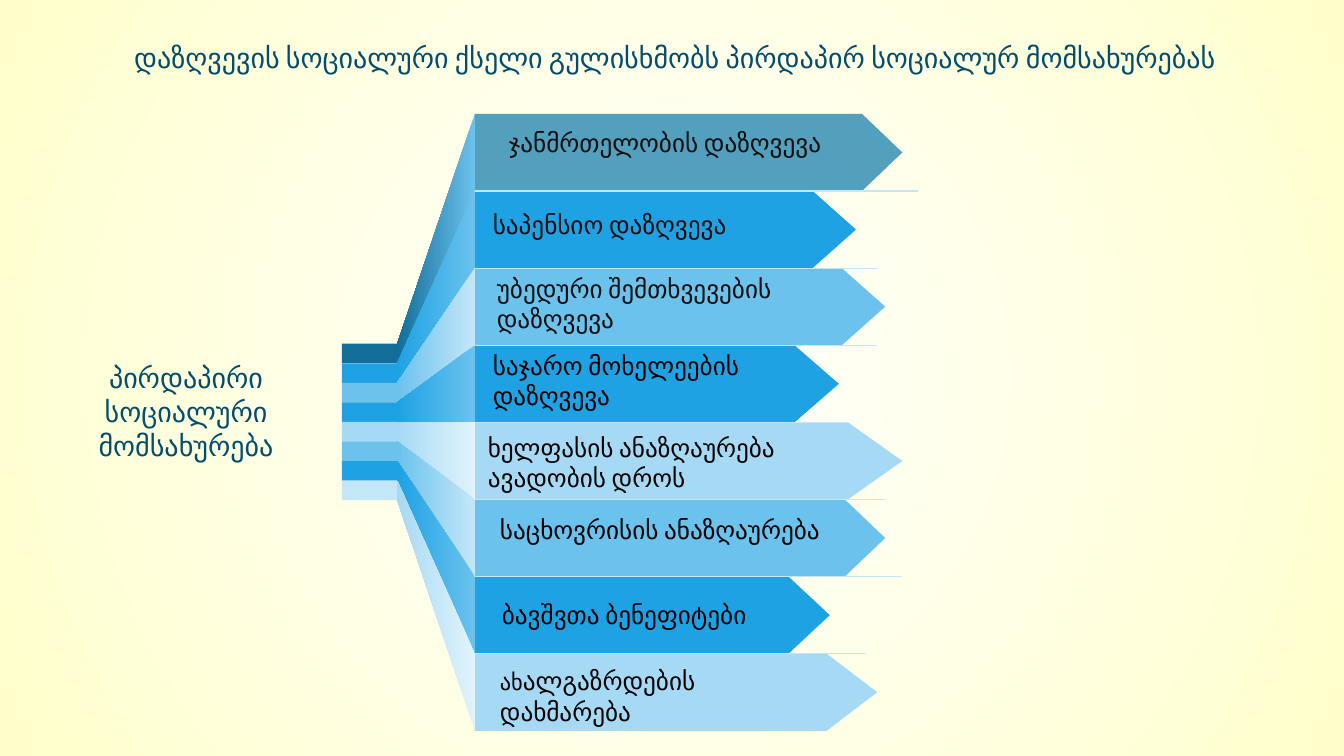
from collections import namedtuple

from lxml import etree
from pptx import Presentation
from pptx.dml.color import RGBColor as RGB
from pptx.enum.shapes import MSO_CONNECTOR as CONN, MSO_SHAPE as SHAPE
from pptx.enum.text import MSO_ANCHOR as ANCHOR, PP_ALIGN as ALIGN
from pptx.oxml.ns import qn
from pptx.util import Inches, Pt

WHITE = RGB(0xFF, 0xFF, 0xFF)
CREAM = RGB(0xFF, 0xFF, 0xCC)
NAVY = RGB(0x00, 0x4D, 0x6E)
BLACK = RGB(0x00, 0x00, 0x00)
INK = RGB(0x0D, 0x0D, 0x0D)
TEAL = RGB(0x01, 0x74, 0xA6)
DEEP = RGB(0x13, 0x6D, 0x99)
BLUE = RGB(0x1E, 0xA2, 0xE4)
SKY = RGB(0x6B, 0xC2, 0xED)
PALE = RGB(0xA6, 0xDA, 0xF4)
MIST = RGB(0xC4, 0xE7, 0xF8)
FROST = RGB(0xE1, 0xF3, 0xFB)

FONT = "Calibri"
ROW_H = 0.765
BAND_H = 0.194

Box = namedtuple("Box", "x y w h")
Service = namedtuple(
    "Service", "runs label ink arrow shoulder tip rule_end band glow fan")

SERVICES = [
    Service([("ჯანმრთელობის დაზღვევა", 18)], Box(0.24, 0.08, 3.83, 0.67), INK,
            TEAL, 3.84, 4.24, 4.39, DEEP, SKY, DEEP),
    Service([("საპენსიო დაზღვევა", 18)], Box(0.08, 0.13, 2.74, 0.67), INK,
            BLUE, 3.35, 3.78, 3.99, BLUE, SKY, BLUE),
    Service([("უბედური შემთხვევების დაზღვევა", 18)], Box(0.12, 0, 3.4, 0.71), INK,
            SKY, 3.64, 4.07, 3.99, SKY, MIST, SKY),
    Service([("საჯარო მოხელეების დაზღვევა", 18)], Box(0.08, 0, 3.56, 0.98), BLACK,
            BLUE, 3.17, 3.61, 3.52, BLUE, SKY, BLUE),
    Service([("ხელფასის ანაზღაურება ავადობის დროს", 18)], Box(0.03, 0.05, 3.75, 0.98),
            BLACK, PALE, 3.7, 4.24, 4.07, PALE, FROST, PALE),
    Service([("საცხოვრისის ანაზღაურება", 18)], Box(0.15, 0.1, 3.92, 0.67), BLACK,
            SKY, 3.67, 4.07, 4.24, SKY, MIST, SKY),
    Service([("ბავშვთა ბენეფიტები", 18)], Box(0.17, 0.18, 3.26, 0.67), BLACK,
            BLUE, 3.11, 3.52, 3.88, BLUE, SKY, BLUE),
    Service([("ახ", 16), ("ალგაზრდების დახმარება", 18)], Box(0.15, 0.07, 2.7, 0.71),
            BLACK, PALE, 3.49, 3.99, None, MIST, FROST, PALE),
]


def set_gradient(fill, *colors):
    fill.gradient()
    for stop, color in zip(fill.gradient_stops, colors):
        stop.color.rgb = color


def paint_background(s):
    fill = s.background.fill
    set_gradient(fill, WHITE, CREAM)
    grad = s.background._cSld.find(".//" + qn("a:gradFill"))
    grad.remove(grad.find(qn("a:lin")))
    circle = etree.SubElement(grad, qn("a:path"), path="circle")
    etree.SubElement(circle, qn("a:fillToRect"), l="50000", t="50000",
                     r="50000", b="50000")


def add_text(s, box, runs, color, align=ALIGN.LEFT, anchor=ANCHOR.TOP, inset=0.1):
    tb = s.shapes.add_textbox(*map(Inches, box))
    tf = tb.text_frame
    tf.word_wrap = True
    tf.vertical_anchor = anchor
    tf.margin_left = tf.margin_right = Inches(inset)
    p = tf.paragraphs[0]
    p.alignment = align
    for text, size in runs:
        r = p.add_run()
        r.text = text
        r.font.name = FONT
        r.font.size = Pt(size)
        r.font.color.rgb = color


def add_polygon(s, points):
    start, *rest = [(Inches(x), Inches(y)) for x, y in points]
    builder = s.shapes.build_freeform(*start)
    builder.add_line_segments(rest, close=True)
    sp = builder.convert_to_shape()
    sp.shadow.inherit = False
    sp.line.fill.background()
    return sp


def add_arrow(s, x, y, service):
    sp = add_polygon(s, [
        (x, y), (x + service.shoulder, y), (x + service.tip, y + ROW_H / 2),
        (x + service.shoulder, y + ROW_H), (x, y + ROW_H)])
    sp.fill.solid()
    sp.fill.fore_color.rgb = service.arrow
    if service.arrow == TEAL:
        color = sp._element.spPr.find(".//" + qn("a:srgbClr"))
        etree.SubElement(color, qn("a:alpha"), val="68000")


def add_band(s, box, service):
    sp = s.shapes.add_shape(SHAPE.RECTANGLE, *map(Inches, box))
    sp.shadow.inherit = False
    sp.line.fill.background()
    sp.fill.solid()
    sp.fill.fore_color.rgb = service.band


def add_fan(s, band, x, y, service):
    left = band.x + band.w
    sp = add_polygon(s, [(left, band.y + band.h), (x, y + ROW_H), (x, y),
                         (left, band.y)])
    set_gradient(sp.fill, service.glow, service.fan)
    sp.fill.gradient_angle = 180


def add_rule(s, x, y, length):
    line = s.shapes.add_connector(CONN.STRAIGHT, Inches(x), Inches(y),
                                  Inches(x + length), Inches(y))
    line.line.color.rgb = MIST
    line.line.width = Pt(0.75)
    etree.SubElement(line._element.spPr, qn("a:effectLst"))


def add_services(s, stem, x, y):
    rows = [(y + i * ROW_H, service) for i, service in enumerate(SERVICES)]
    for top, service in rows:
        add_arrow(s, x, top, service)
    for i, (top, service) in enumerate(rows):
        band = Box(stem.x, stem.y + i * BAND_H, stem.w, BAND_H)
        add_band(s, band, service)
        add_fan(s, band, x, top, service)
    for top, service in rows:
        label = service.label
        box = Box(x + label.x, top + label.y, label.w, label.h)
        add_text(s, box, service.runs, service.ink)
    for top, service in rows:
        if service.rule_end:
            add_rule(s, x, top + ROW_H, service.rule_end)


def main():
    prs = Presentation()
    prs.slide_width, prs.slide_height = Inches(13.33), Inches(7.5)
    s = prs.slides.add_slide(prs.slide_layouts[6])
    paint_background(s)
    add_text(s, Box(1.33, 0.18, 12, 0.78),
             [("დაზღვევის სოციალური ქსელი გულისხმობს პირდაპირ სოციალურ მომსახურებას", 20)],
             NAVY, anchor=ANCHOR.MIDDLE, inset=0)
    add_text(s, Box(0.61, 3.53, 2.47, 1.11),
             [("პირდაპირი სოციალური მომსახურება", 20)], NAVY, ALIGN.CENTER)
    add_services(s, Box(3.39, 3.41, 0.55, 8 * BAND_H), 4.71, 1.13)
    prs.save("out.pptx")


if __name__ == "__main__":
    main()
